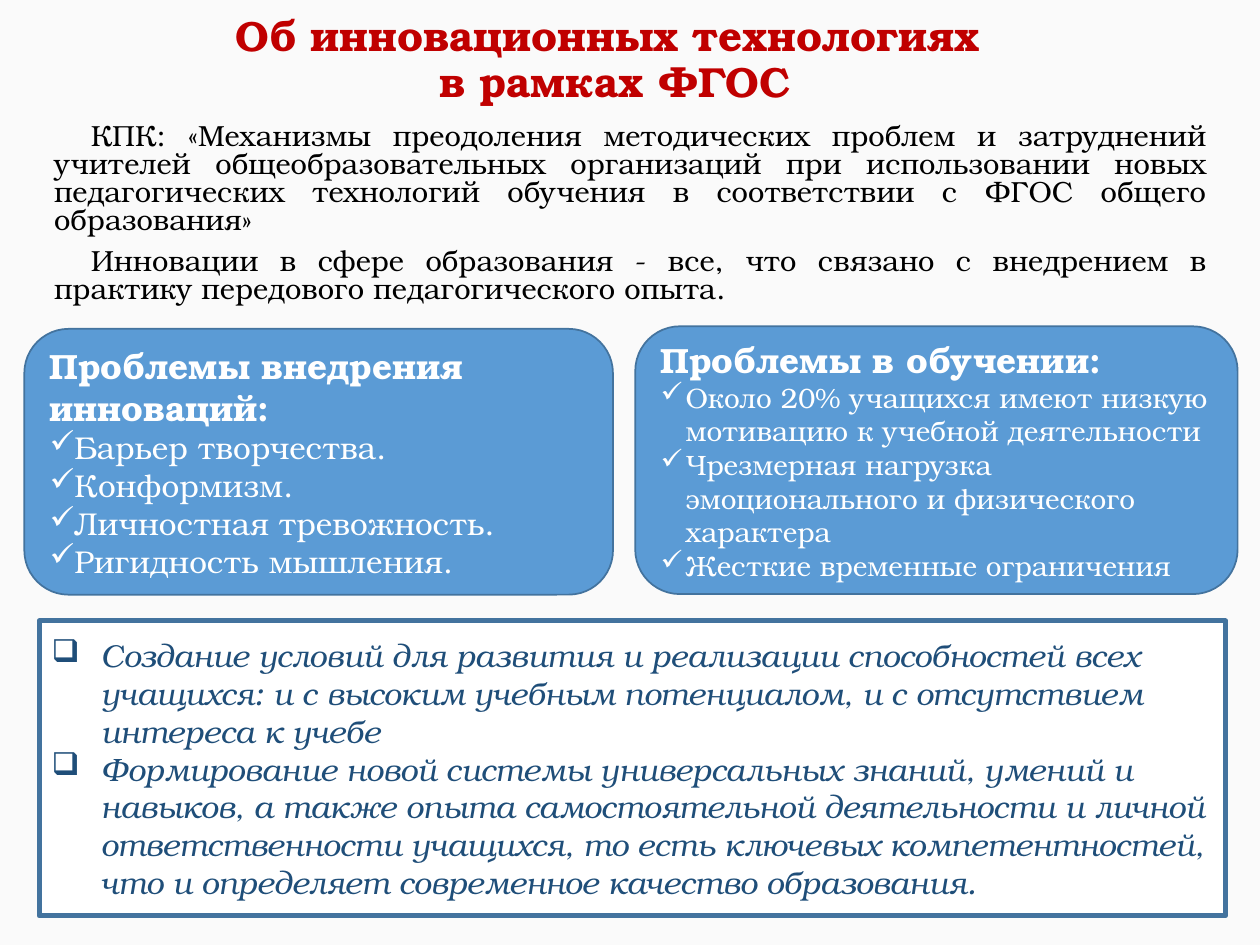
from dataclasses import dataclass
from typing import Any, Optional

from lxml.etree import SubElement
from pptx import Presentation
from pptx.dml.color import RGBColor
from pptx.enum.shapes import MSO_SHAPE
from pptx.enum.text import MSO_ANCHOR, PP_ALIGN
from pptx.oxml.ns import qn
from pptx.util import Pt


@dataclass(frozen=True)
class Theme:
    font: str = "TeX Gyre Bonum"
    background: RGBColor = RGBColor(0xFA, 0xFA, 0xFA)
    title: RGBColor = RGBColor(0xC0, 0x00, 0x00)
    body: RGBColor = RGBColor(0x00, 0x00, 0x00)
    light: RGBColor = RGBColor(0xFF, 0xFF, 0xFF)
    panel: RGBColor = RGBColor(0x5B, 0x9B, 0xD5)
    outline: RGBColor = RGBColor(0x43, 0x73, 0x9E)
    goal: RGBColor = RGBColor(0x1F, 0x4E, 0x79)
    title_size: float = 24
    heading_size: float = 20
    list_size: float = 18
    dense_size: float = 16
    body_size: float = 16.6


THEME = Theme()


@dataclass(frozen=True)
class Style:
    size: float
    color: RGBColor
    bold: bool = False
    italic: bool = False
    align: PP_ALIGN = PP_ALIGN.LEFT
    spacing: float = 1.0
    before: float = 0
    first_indent: float = 0
    bullet: str = ""
    hanging: float = 0
    tab: bool = False


@dataclass(frozen=True)
class Line:
    text: str
    style: Style


@dataclass(frozen=True)
class Block:
    left: float
    top: float
    width: float
    height: float
    lines: list[Line]
    anchor: MSO_ANCHOR = MSO_ANCHOR.MIDDLE
    outline_shape: Optional[MSO_SHAPE] = None
    fill: Optional[RGBColor] = None
    line_width: float = 1


def apply(target: Any, values: dict[str, Any]) -> None:
    for attribute, value in values.items():
        setattr(target, attribute, value)


def set_indents(paragraph: Any, style: Style) -> None:
    """Add margin, bullet and tab stop, which need XML."""
    properties = paragraph._p.get_or_add_pPr()
    properties.set("marL", str(Pt(style.hanging)))
    properties.set("indent", str(Pt(style.first_indent - style.hanging)))
    if style.bullet:
        SubElement(properties, qn("a:buChar"), char=style.bullet)
    if style.tab:
        stops = SubElement(properties, qn("a:tabLst"))
        SubElement(stops, qn("a:tab"), pos=str(Pt(style.hanging)), algn="l")


def write_line(paragraph: Any, line: Line, is_first: bool) -> None:
    style = line.style
    set_indents(paragraph, style)
    apply(paragraph, {
        "text": line.text,
        "alignment": style.align,
        "line_spacing": style.spacing,
        "space_before": Pt(0 if is_first else style.before),
    })
    for run in paragraph.runs:
        apply(run.font, {
            "name": THEME.font,
            "size": Pt(style.size),
            "bold": style.bold,
            "italic": style.italic,
        })
        run.font.color.rgb = style.color


def draw_block(slide: Any, block: Block) -> None:
    bounds = [Pt(v) for v in (block.left, block.top, block.width, block.height)]
    if block.outline_shape is None:
        holder = slide.shapes.add_textbox(*bounds)
    else:
        holder = slide.shapes.add_shape(block.outline_shape, *bounds)
        holder.shadow.inherit = False
        holder.fill.solid()
        holder.fill.fore_color.rgb = block.fill
        holder.line.color.rgb = THEME.outline
        holder.line.width = Pt(block.line_width)
    frame = holder.text_frame
    apply(frame, {"word_wrap": True, "vertical_anchor": block.anchor})
    for index, line in enumerate(block.lines):
        paragraph = frame.add_paragraph() if index else frame.paragraphs[0]
        write_line(paragraph, line, index == 0)


TITLE = Style(THEME.title_size, THEME.title, bold=True, align=PP_ALIGN.CENTER, spacing=0.9)
INTRO = Style(THEME.body_size, THEME.body, align=PP_ALIGN.JUSTIFY, spacing=0.8,
              before=7.5, first_indent=21)
HEADING = Style(THEME.heading_size, THEME.light, bold=True)
BARRIER = Style(THEME.list_size, THEME.light, bullet="✓")
DIFFICULTY = Style(THEME.dense_size, THEME.light, bullet="✓", hanging=14.2, tab=True)
GOAL = Style(THEME.list_size, THEME.goal, italic=True, bullet="❑", hanging=28.1)

BLOCKS = [
    Block(41, 0, 620.6, 69.8, [
        Line("Об инновационных технологиях \nв рамках ФГОС", TITLE),
    ]),
    Block(23.8, 67.7, 672.5, 118, [
        Line("КПК: «Механизмы преодоления методических проблем и затруднений учителей "
             "общеобразовательных организаций при использовании новых педагогических "
             "технологий обучения в соответствии с ФГОС общего образования»", INTRO),
        Line("Инновации в сфере образования - все, что связано с внедрением в практику "
             "передового педагогического опыта.", INTRO),
    ], anchor=MSO_ANCHOR.TOP),
    Block(13.9, 187.9, 336.4, 151.9, [
        Line("Проблемы внедрения инноваций:", HEADING),
        Line("Барьер творчества.", BARRIER),
        Line("Конформизм.", BARRIER),
        Line("Личностная тревожность.", BARRIER),
        Line("Ригидность мышления.", BARRIER),
    ], outline_shape=MSO_SHAPE.ROUNDED_RECTANGLE, fill=THEME.panel),
    Block(363, 186.5, 344.2, 153, [
        Line("Проблемы в обучении:", HEADING),
        Line("Около 20% учащихся имеют низкую мотивацию к учебной деятельности", DIFFICULTY),
        Line("Чрезмерная нагрузка эмоционального и физического характера", DIFFICULTY),
        Line("Жесткие временные ограничения", DIFFICULTY),
    ], outline_shape=MSO_SHAPE.ROUNDED_RECTANGLE, fill=THEME.panel),
    Block(22.4, 354.8, 678, 168.6, [
        Line("Создание условий для развития и реализации способностей всех учащихся: "
             "и с высоким учебным потенциалом, и с отсутствием интереса к учебе", GOAL),
        Line("Формирование новой системы универсальных знаний, умений и навыков, а также "
             "опыта самостоятельной деятельности и личной ответственности учащихся, то есть "
             "ключевых компетентностей, что и определяет современное качество образования.",
             GOAL),
    ], outline_shape=MSO_SHAPE.RECTANGLE, fill=THEME.light, line_width=2.75),
]


def main() -> None:
    presentation = Presentation()
    apply(presentation, {"slide_width": Pt(720), "slide_height": Pt(540)})
    slide = presentation.slides.add_slide(presentation.slide_layouts[6])
    slide.background.fill.solid()
    slide.background.fill.fore_color.rgb = THEME.background
    for block in BLOCKS:
        draw_block(slide, block)
    presentation.save("out.pptx")


if __name__ == "__main__":
    main()
